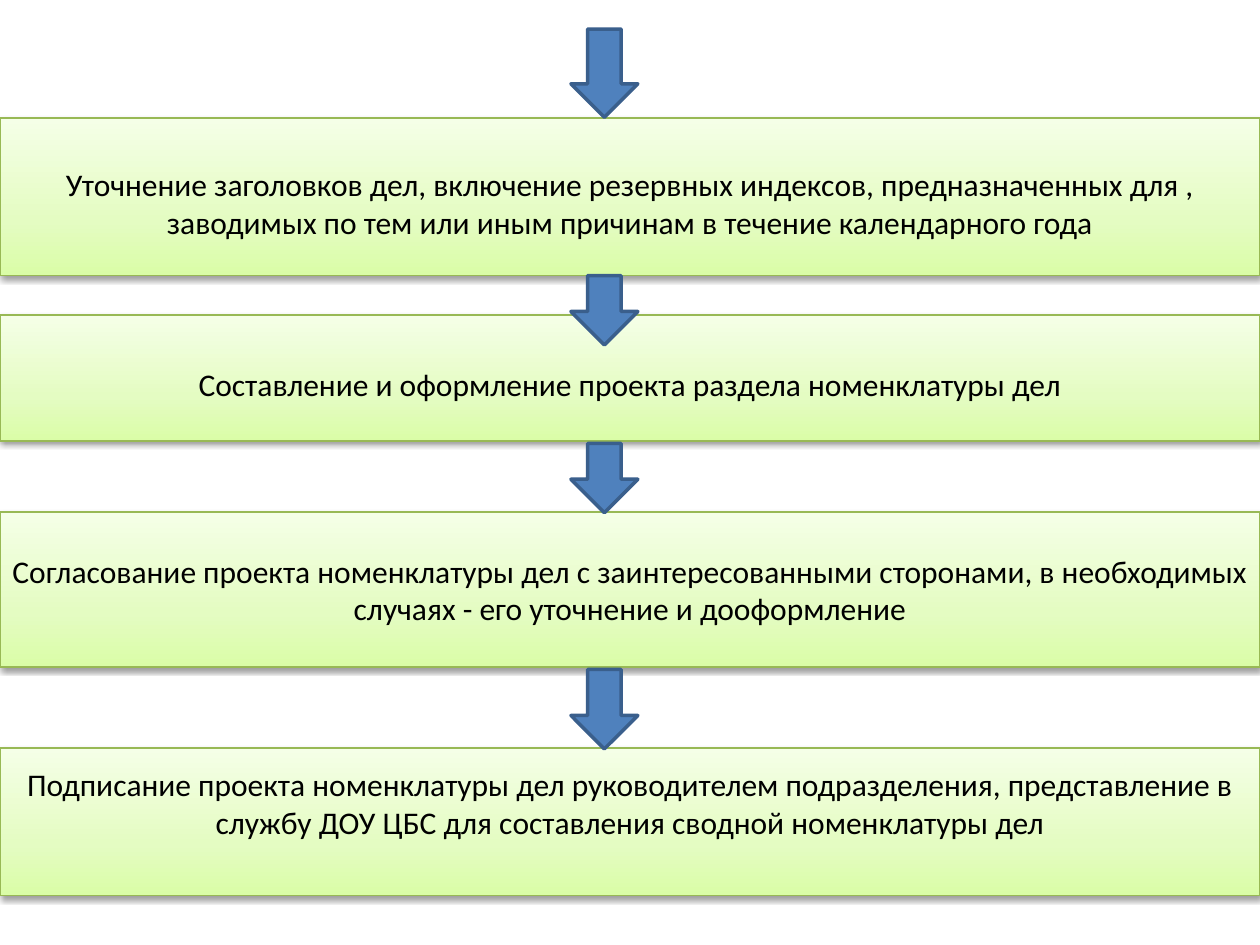
from copy import deepcopy
from dataclasses import dataclass

from lxml.etree import SubElement
from pptx import Presentation
from pptx.dml.color import RGBColor
from pptx.enum.shapes import MSO_SHAPE
from pptx.enum.text import MSO_ANCHOR, PP_ALIGN
from pptx.oxml.ns import qn
from pptx.slide import Slide
from pptx.util import Inches, Pt

BLUE = RGBColor(0x4F, 0x81, 0xBD)
DARK_BLUE = RGBColor(0x3A, 0x5F, 0x8C)
GREEN = RGBColor(0x98, 0xB9, 0x55)
BLACK = RGBColor(0, 0, 0)
STEP_GRADIENT = [
    (0, RGBColor(0xDA, 0xFD, 0xA7)),
    (0.35, RGBColor(0xE4, 0xFC, 0xC2)),
    (1, RGBColor(0xF5, 0xFF, 0xE7)),
]
COLUMNS, ROWS = 32, 24
CELL = 0.3125

STEPS = [
    (3, 4, "Уточнение заголовков дел, включение резервных индексов, предназначенных для , "
     "заводимых по тем или иным причинам в течение календарного года", {"margin_top": Inches(0.15)}),
    (8, 3.2, "Составление и оформление проекта раздела номенклатуры дел",
     {"margin_top": Inches(0.15)}),
    (13, 3.94, "Согласование проекта номенклатуры дел с заинтересованными сторонами, "
     "в необходимых случаях - его уточнение и дооформление", {}),
    (19, 3.74, "Подписание проекта номенклатуры дел руководителем подразделения, "
     "представление в службу ДОУ ЦБС для составления сводной номенклатуры дел",
     {"margin_bottom": Inches(0.35)}),
]
ARROWS = [(0.74, 2.24), (7, 1.76), (11.26, 1.76), (17, 2.02)]


def apply(target, values):
    for name, value in values.items():
        setattr(target, name, value)


@dataclass
class FlowSlide:
    slide: Slide
    font_name: str = "Calibri"
    font_size: int = 18

    def place(self, kind, column, row, columns, rows, line_color, line_width):
        lengths = [Inches(CELL * cells) for cells in (column, row, columns, rows)]
        shape = self.slide.shapes.add_shape(kind, *lengths)
        shape.shadow.inherit = False
        shape.line.color.rgb = line_color
        shape.line.width = Pt(line_width)
        return shape

    def arrow(self, row, rows):
        arrow = self.place(MSO_SHAPE.DOWN_ARROW, 14.5, row, 1.7, rows, DARK_BLUE, 2)
        arrow.fill.solid()
        arrow.fill.fore_color.rgb = BLUE

    def step(self, row, rows, wording, insets):
        step = self.place(MSO_SHAPE.RECTANGLE, 0, row, COLUMNS, rows, GREEN, 0.75)
        self.shade(step)
        self.cast_shadow(step)
        frame = step.text_frame
        apply(frame, {"word_wrap": True, "vertical_anchor": MSO_ANCHOR.MIDDLE, **insets})
        paragraph = frame.paragraphs[0]
        paragraph.alignment = PP_ALIGN.CENTER
        run = paragraph.add_run()
        run.text = wording
        apply(run.font, {"name": self.font_name, "size": Pt(self.font_size)})
        run.font.color.rgb = BLACK

    def shade(self, step):
        step.fill.gradient()
        step.fill.gradient_angle = 90
        stops = step._element.spPr.find(qn("a:gradFill")).find(qn("a:gsLst"))
        stops.insert(1, deepcopy(stops[0]))
        for stop, (position, color) in zip(step.fill.gradient_stops, STEP_GRADIENT):
            stop.position = position
            stop.color.rgb = color

    def cast_shadow(self, step):
        effects = step._element.spPr.find(qn("a:effectLst"))
        shadow = SubElement(effects, qn("a:outerShdw"), blurRad="40000", dist="20000",
                            dir="5400000", rotWithShape="0")
        color = SubElement(shadow, qn("a:srgbClr"), val=str(BLACK))
        SubElement(color, qn("a:alpha"), val="38000")


def main():
    deck = Presentation()
    deck.slide_width = Inches(COLUMNS * CELL)
    deck.slide_height = Inches(ROWS * CELL)
    flow = FlowSlide(deck.slides.add_slide(deck.slide_layouts[6]))
    for step in STEPS:
        flow.step(*step)
    for arrow in ARROWS:
        flow.arrow(*arrow)
    deck.save("out.pptx")


if __name__ == "__main__":
    main()
